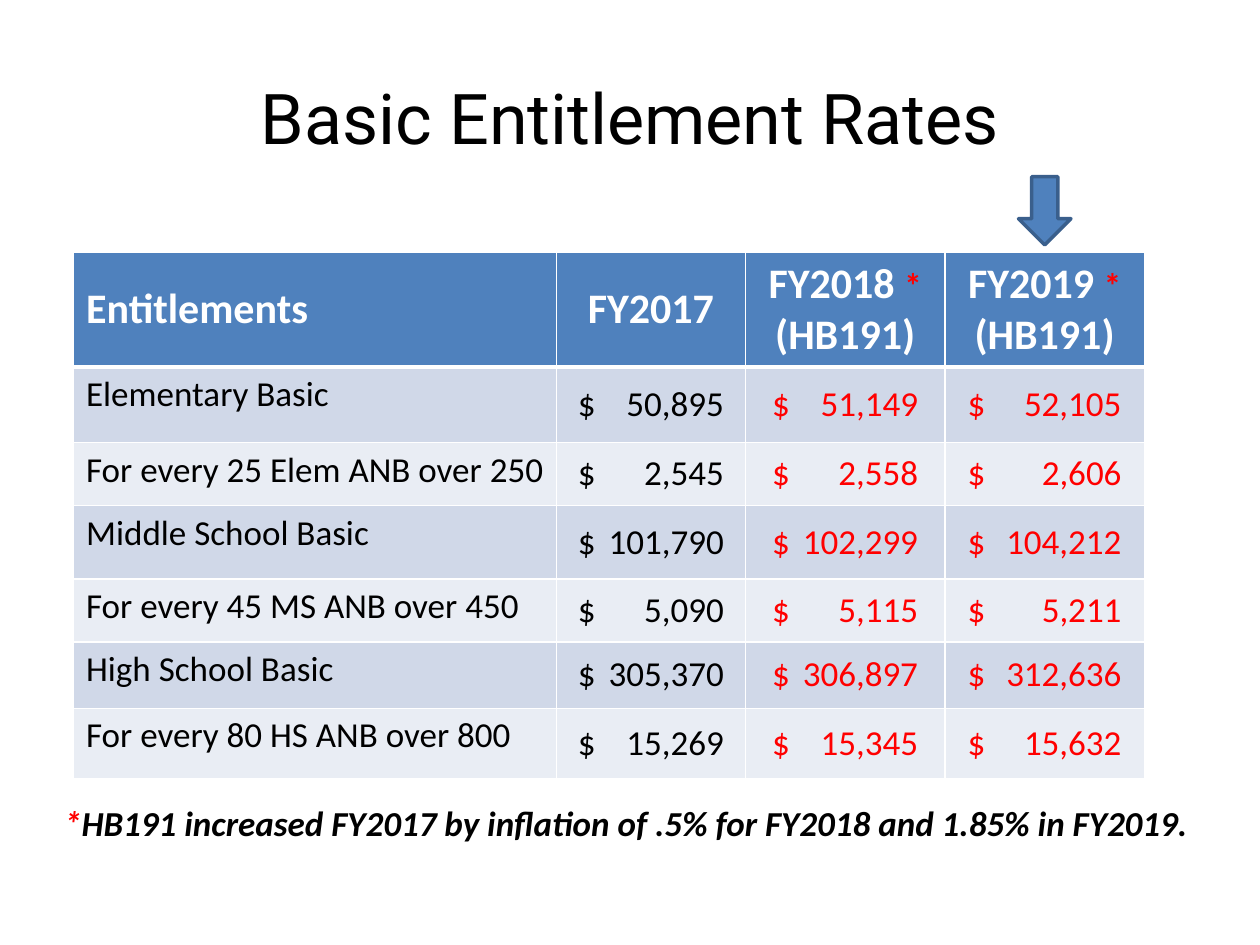
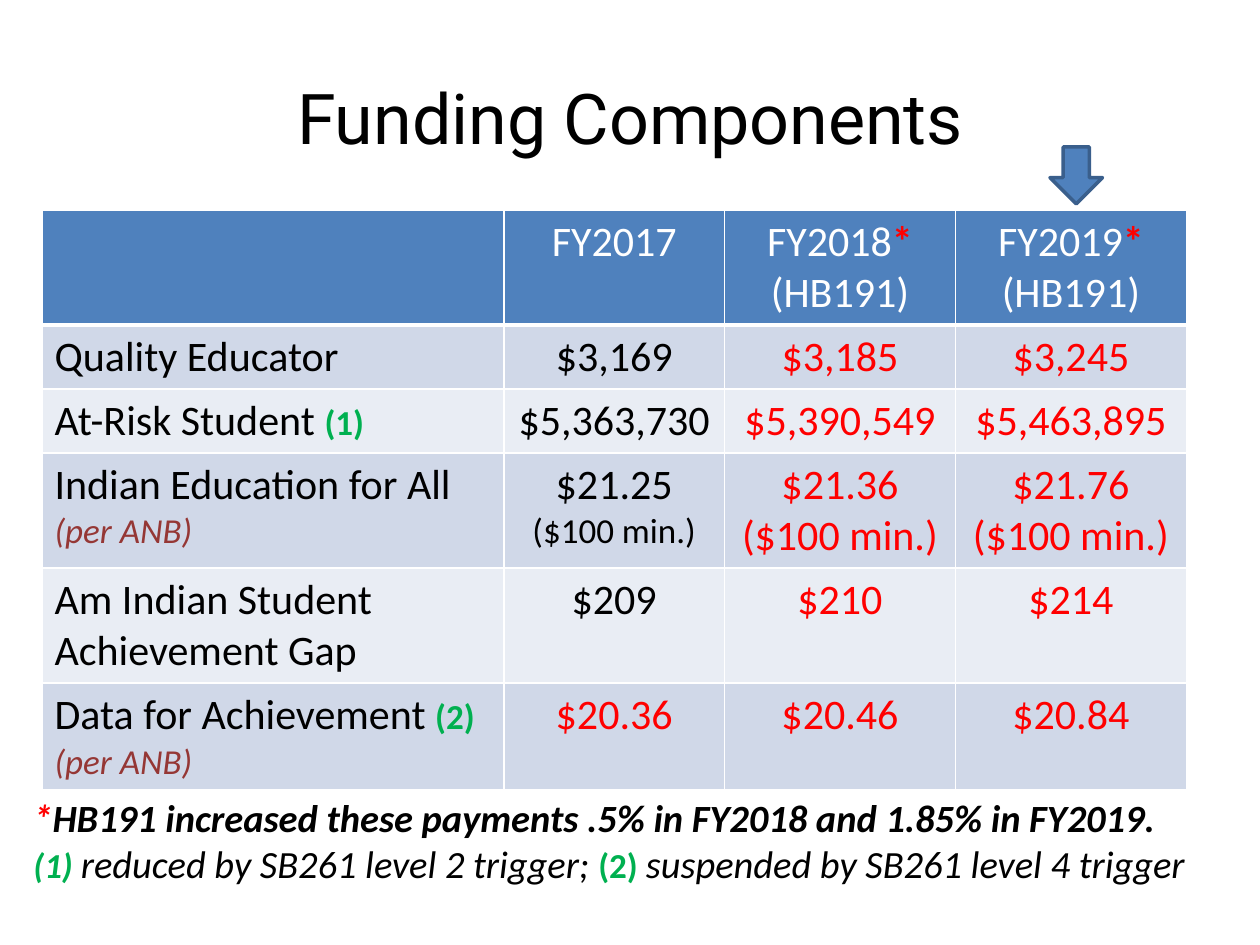
from typing import NamedTuple, Optional

from lxml import etree
from pptx import Presentation
from pptx.dml.color import RGBColor
from pptx.enum.shapes import MSO_SHAPE
from pptx.enum.text import MSO_ANCHOR, MSO_AUTO_SIZE, PP_ALIGN
from pptx.oxml.ns import qn
from pptx.util import Pt

LEFT, CENTER = PP_ALIGN.LEFT, PP_ALIGN.CENTER
TOP, MIDDLE = MSO_ANCHOR.TOP, MSO_ANCHOR.MIDDLE
FIT_TEXT = MSO_AUTO_SIZE.SHAPE_TO_FIT_TEXT
DOWN_ARROW = MSO_SHAPE.DOWN_ARROW

TITLE_FONT, BODY_FONT = "Roboto", "Calibri"
BLACK, WHITE, RED, GREEN, MAROON = "000000", "FFFFFF", "FF0000", "00B050", "953735"
BLUE, DARK_BLUE = "4F81BD", "3A5F8C"
BANDS = ("D0D8E8", "E9EDF4")
TITLE_ONLY = 5


class Box(NamedTuple):
    left: float
    top: float
    width: float
    height: float

    def emu(self) -> list:
        return [Pt(v) for v in self]


class Run(NamedTuple):
    """A piece of text; None keeps the paragraph's setting."""
    text: str
    color: Optional[str] = None
    size: Optional[float] = None
    bold: Optional[bool] = None
    italic: Optional[bool] = None


class Para(NamedTuple):
    runs: tuple
    size: float
    color: str = BLACK
    bold: bool = False
    italic: bool = False
    align: int = LEFT


class Cell(NamedTuple):
    paras: tuple
    anchor: int = TOP
    tab_span: Optional[float] = None


class Grid(NamedTuple):
    left: float
    top: float
    cols: tuple
    heights: tuple
    rows: list


def rgb(color: str) -> RGBColor:
    return RGBColor.from_string(color)


def style_font(font, style) -> None:
    """Apply the settings that a Run or Para carries."""
    if style.color is not None:
        font.color.rgb = rgb(style.color)
    if style.size is not None:
        font.size = Pt(style.size)
    if style.bold is not None:
        font.bold = style.bold
    if style.italic is not None:
        font.italic = style.italic


def write(tf, paras: tuple) -> None:
    for i, para in enumerate(paras):
        p = tf.paragraphs[0] if i == 0 else tf.add_paragraph()
        p.alignment = para.align
        p.font.name = BODY_FONT
        style_font(p.font, para)
        for run in para.runs:
            r = p.add_run()
            r.text = run.text
            style_font(r.font, run)


def add_right_tab(p, position: float) -> None:
    tabs = etree.Element(qn("a:tabLst"))
    etree.SubElement(tabs, qn("a:tab"), pos=str(Pt(position)), algn="r")
    p._p.get_or_add_pPr().insert(0, tabs)


def set_borders(cell, row: int) -> None:
    """White rules, with a thick one under the header row."""
    widths = {"L": 1, "R": 1, "T": 3 if row == 1 else 1, "B": 3 if row == 0 else 1}
    tc_pr = cell._tc.get_or_add_tcPr()
    for side, width in widths.items():
        ln = etree.SubElement(tc_pr, qn(f"a:ln{side}"), w=str(Pt(width)))
        fill = etree.SubElement(ln, qn("a:solidFill"))
        etree.SubElement(fill, qn("a:srgbClr"), val=WHITE)


def add_grid(slide, grid: Grid) -> None:
    box = Box(grid.left, grid.top, sum(grid.cols), sum(grid.heights))
    table = slide.shapes.add_table(len(grid.rows), len(grid.cols), *box.emu()).table
    for column, width in zip(table.columns, grid.cols):
        column.width = Pt(width)
    for i, (height, row) in enumerate(zip(grid.heights, grid.rows)):
        table.rows[i].height = Pt(height)
        for j, content in enumerate(row):
            cell = table.cell(i, j)
            set_borders(cell, i)
            cell.fill.solid()
            cell.fill.fore_color.rgb = rgb(BANDS[(i - 1) % 2] if i else BLUE)
            cell.vertical_anchor = content.anchor
            write(cell.text_frame, content.paras)
            if content.tab_span:
                cell.margin_left = Pt((grid.cols[j] - content.tab_span) / 2)
                add_right_tab(cell.text_frame.paragraphs[0], content.tab_span)


def add_titled_slide(prs, title: str):
    slide = prs.slides.add_slide(prs.slide_layouts[TITLE_ONLY])
    sp = slide.shapes.title
    sp.left, sp.top, sp.width, sp.height = Box(36, 21.6, 648, 90).emu()
    sp.text_frame.text = title
    sp.text_frame.vertical_anchor = MIDDLE
    p = sp.text_frame.paragraphs[0]
    p.alignment = CENTER
    p.font.name, p.font.size = TITLE_FONT, Pt(40)
    p.font.color.rgb = rgb(BLACK)
    return slide


def add_arrow(slide, box: Box) -> None:
    sp = slide.shapes.add_shape(DOWN_ARROW, *box.emu())
    sp.shadow.inherit = False
    sp.fill.solid()
    sp.fill.fore_color.rgb = rgb(BLUE)
    sp.line.color.rgb = rgb(DARK_BLUE)
    sp.line.width = Pt(2)


def add_footnote(slide, box: Box, paras: tuple) -> None:
    tf = slide.shapes.add_textbox(*box.emu()).text_frame
    tf.word_wrap = True
    tf.auto_size = FIT_TEXT
    write(tf, paras)


def entitlement_rows() -> list:
    def heading(*runs: Run, align: int = CENTER) -> Cell:
        return Cell((Para(runs, 24, WHITE, bold=True, align=align),), MIDDLE)

    star, bill = Run("*", RED, 20), Run(" (HB191)")
    rows = [[heading(Run("Entitlements"), align=LEFT), heading(Run("FY2017")),
             heading(Run("FY2018 "), star, bill), heading(Run("FY2019 "), star, bill)]]
    rates = [
        ("Elementary Basic", "50,895", "51,149", "52,105"),
        ("For every 25 Elem ANB over 250", "2,545", "2,558", "2,606"),
        ("Middle School Basic", "101,790", "102,299", "104,212"),
        ("For every 45 MS ANB over 450", "5,090", "5,115", "5,211"),
        ("High School Basic", "305,370", "306,897", "312,636"),
        ("For every 80 HS ANB over 800", "15,269", "15,345", "15,632"),
    ]
    columns = ((BLACK, 83.5), (RED, 83.5), (RED, 88))
    for label, *amounts in rates:
        rows.append([Cell((Para((Run(label),), 20),))] + [
            Cell((Para((Run(f"$\t{amount}"),), 20, color),), MIDDLE, span)
            for amount, (color, span) in zip(amounts, columns)])
    return rows


def component_rows() -> list:
    def centered(color: str, *runs: Run) -> Cell:
        return Cell((Para(runs, 24, color, align=CENTER),))

    star = Run("*", RED, bold=True)
    per_anb = Run("(per ANB)", MAROON, 20, italic=True)
    rows = [[Cell(()), centered(WHITE, Run("FY2017")),
             centered(WHITE, Run("FY2018"), star, Run(" (HB191)")),
             centered(WHITE, Run("FY2019"), star, Run(" (HB191)"))]]
    components = [
        ((Run("Quality Educator"),), "$3,169", "$3,185", "$3,245"),
        ((Run("At-Risk Student "), Run("(1)", GREEN, 20, True)),
         "$5,363,730", "$5,390,549", "$5,463,895"),
        ((Run("Indian Education for All "), per_anb),
         "$21.25", "$21.36 ($100 min.)", "$21.76 ($100 min.)"),
        ((Run("Am Indian Student Achievement Gap"),), "$209", "$210", "$214"),
        ((Run("Data for Achievement "), Run("(2) ", GREEN, 20, True), per_anb),
         "$20.36", "$20.46", "$20.84"),
    ]
    for label, *amounts in components:
        colors = (RED if amounts[0] == "$20.36" else BLACK, RED, RED)
        rows.append([Cell((Para(label, 24),))] + [
            centered(color, Run(amount)) for amount, color in zip(amounts, colors)])
    indian_education = rows[3]
    minimum = Para((Run("($100 min.)"),), 20, align=CENTER)
    indian_education[1] = Cell(indian_education[1].paras + (minimum,))
    return rows


def main() -> None:
    prs = Presentation()
    prs.slide_width, prs.slide_height = Pt(720), Pt(540)

    slide = add_titled_slide(prs, "Basic Entitlement Rates")
    add_grid(slide, Grid(42, 144, (276, 108, 114, 114),
                         (64, 43, 36, 42, 36, 38, 40), entitlement_rows()))
    add_footnote(slide, Box(29.5, 454.5, 672, 31.5), (
        Para((Run("*", RED), Run("HB191 increased FY2017 by inflation of .5% for "
                                 "FY2018 and 1.85% in FY2019.")),
             20, bold=True, italic=True),))
    add_arrow(slide, Box(582, 101, 30, 39))

    slide = add_titled_slide(prs, "Funding Components")
    add_grid(slide, Grid(24, 120, (264, 126, 132, 132),
                         (65, 36, 36, 65, 65, 60), component_rows()))
    add_arrow(slide, Box(600, 84, 30, 32.5))
    add_footnote(slide, Box(12, 450, 696, 60.5), (
        Para((Run("*", RED), Run("HB191 increased these payments .5% in FY2018 "
                                 "and 1.85% in FY2019.")),
             22, bold=True, italic=True),
        Para((Run("(1) ", GREEN, 20, True),
              Run("reduced by SB261 level 2 trigger; "),
              Run("(2) ", GREEN, 20, True, False),
              Run("suspended by SB261 level 4 trigger")), 22, italic=True)))

    prs.save("out.pptx")


if __name__ == "__main__":
    main()
